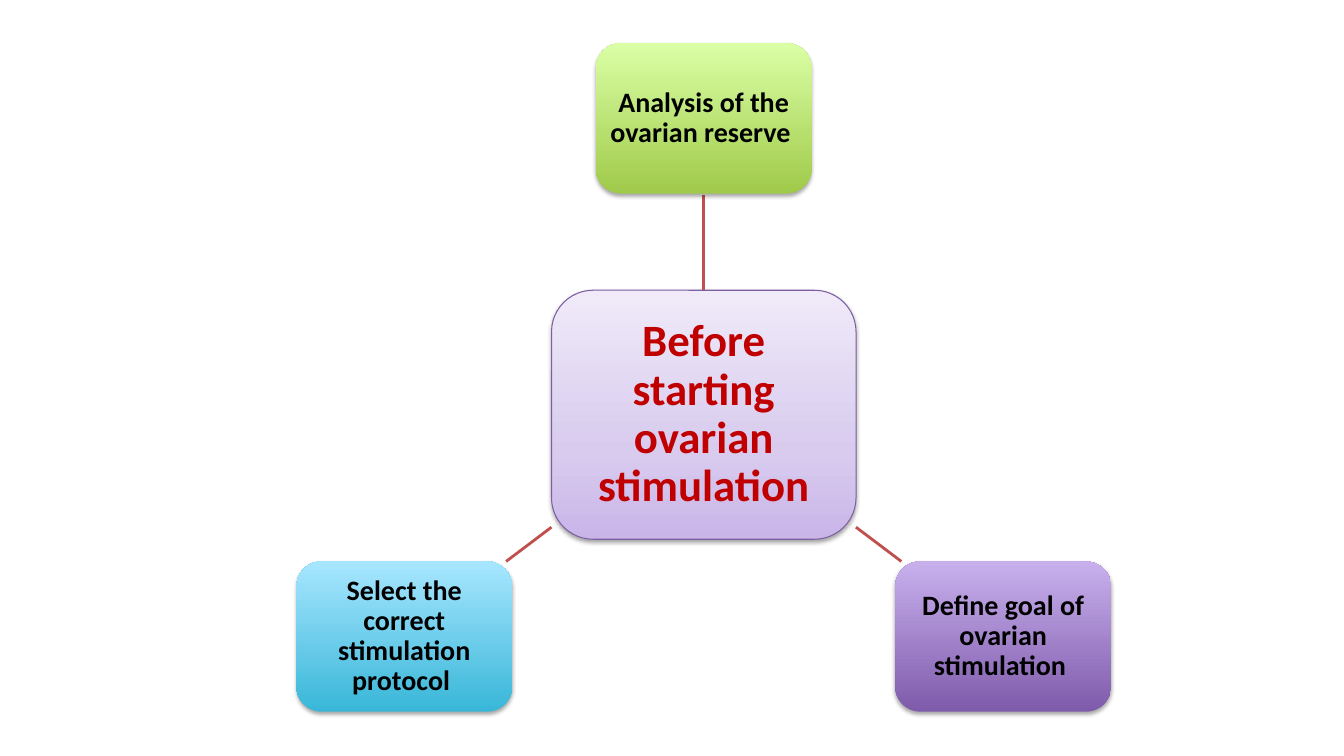
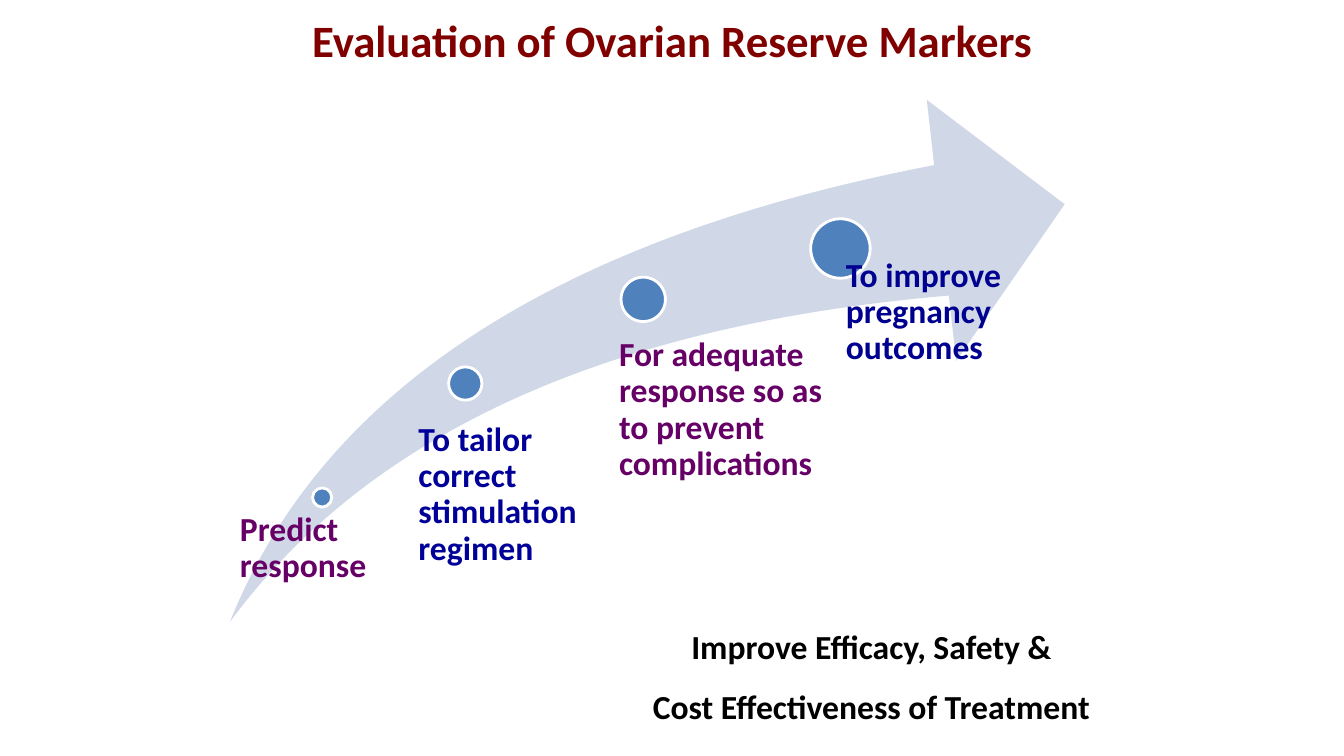
from lxml import etree
from pptx import Presentation
from pptx.dml.color import RGBColor
from pptx.enum.shapes import MSO_CONNECTOR, MSO_SHAPE
from pptx.enum.text import MSO_ANCHOR, PP_ALIGN
from pptx.oxml import parse_xml
from pptx.oxml.ns import nsdecls, qn
from pptx.util import Inches, Pt

ROUNDED, CIRCLE, SWOOSH = MSO_SHAPE.ROUNDED_RECTANGLE, MSO_SHAPE.OVAL, MSO_SHAPE.SWOOSH_ARROW
STRAIGHT = MSO_CONNECTOR.STRAIGHT
TOP, MIDDLE = MSO_ANCHOR.TOP, MSO_ANCHOR.MIDDLE
LEFT, CENTER = PP_ALIGN.LEFT, PP_ALIGN.CENTER

FONT = "Calibri"
BLACK = RGBColor(0x00, 0x00, 0x00)
WHITE = RGBColor(0xFF, 0xFF, 0xFF)
RED = RGBColor(0xC0, 0x00, 0x00)
MAROON = RGBColor(0x80, 0x00, 0x00)
PLUM = RGBColor(0x66, 0x00, 0x66)
NAVY = RGBColor(0x00, 0x00, 0x99)
DEEP_NAVY = RGBColor(0x00, 0x00, 0x90)
BLUE = RGBColor(0x4F, 0x81, 0xBD)
PALE_BLUE = RGBColor(0xD0, 0xD8, 0xE8)
BRICK = RGBColor(0xC0, 0x50, 0x4D)
VIOLET = RGBColor(0x7D, 0x60, 0xA0)

# Gradient stops from bottom to top: (percent, colour)
LILAC_FADE = [(0, RGBColor(0xC9, 0xB5, 0xE8)), (35, RGBColor(0xD8, 0xCB, 0xEE)),
              (100, RGBColor(0xF0, 0xEA, 0xF9))]
GREEN_FADE = [(0, RGBColor(0xA0, 0xCA, 0x4A)), (100, RGBColor(0xDA, 0xFF, 0xA5))]
PURPLE_FADE = [(0, RGBColor(0x7F, 0x5B, 0xAB)), (100, RGBColor(0xC8, 0xB0, 0xED))]
CYAN_FADE = [(0, RGBColor(0x39, 0xB7, 0xD8)), (100, RGBColor(0xA7, 0xE6, 0xFF))]


class Deck:
    def __init__(self):
        self.prs = Presentation()
        self.prs.slide_width, self.prs.slide_height = Inches(13.33), Inches(7.5)
        self.slide = None

    def new_slide(self):
        self.slide = self.prs.slides.add_slide(self.prs.slide_layouts[6])

    def set_text(self, frame, lines, size, color, align, spacing, anchor, inset):
        frame.word_wrap = True
        frame.vertical_anchor = anchor
        frame.margin_left = frame.margin_right = Inches(inset[0])
        frame.margin_top = frame.margin_bottom = Inches(inset[1])
        for index, line in enumerate(lines):
            paragraph = frame.add_paragraph() if index else frame.paragraphs[0]
            paragraph.text = line
            paragraph.alignment, paragraph.line_spacing = align, spacing
            font = paragraph.font
            font.name, font.size, font.bold = FONT, Pt(size), True
            font.color.rgb = color

    def text(self, box, lines, size, color, align=LEFT, spacing=0.9, inset=(0, 0)):
        frame = self.slide.shapes.add_textbox(*map(Inches, box)).text_frame
        self.set_text(frame, lines, size, color, align, spacing, TOP, inset)

    def shape(self, kind, box, fill=None, line=None, line_width=2):
        shape = self.slide.shapes.add_shape(kind, *map(Inches, box))
        shape.shadow.inherit = False
        if fill is not None:
            shape.fill.solid()
            shape.fill.fore_color.rgb = fill
        if line is None:
            shape.line.fill.background()
        else:
            shape.line.color.rgb, shape.line.width = line, Pt(line_width)
        return shape

    def card(self, box, label, stops, size, color, inset, line=None):
        """Rounded box with a vertical gradient, a soft shadow and a label."""
        card = self.shape(ROUNDED, box, line=line, line_width=0.75)
        card.fill.gradient()
        card.fill.gradient_angle = 90
        properties = card._element.spPr
        stop_list = properties.find(qn("a:gradFill")).find(qn("a:gsLst"))
        for old_stop in list(stop_list):
            stop_list.remove(old_stop)
        for percent, stop_color in stops:
            stop = etree.SubElement(stop_list, qn("a:gs"), pos=str(percent * 1000))
            etree.SubElement(stop, qn("a:srgbClr"), val=str(stop_color))
        properties.find(qn("a:effectLst")).append(parse_xml(
            f'<a:outerShdw {nsdecls("a")} blurRad="{Pt(3.1)}" dist="{Pt(1.8)}" dir="5400000"'
            ' rotWithShape="0"><a:srgbClr val="000000"><a:alpha val="35000"/></a:srgbClr>'
            '</a:outerShdw>'))
        self.set_text(card.text_frame, [label], size, color, CENTER, 0.9, MIDDLE, (inset, inset))

    def spoke(self, start, end):
        spoke = self.slide.shapes.add_connector(STRAIGHT, *map(Inches, start + end))
        spoke.line.color.rgb, spoke.line.width = BRICK, Pt(2)
        etree.SubElement(spoke._element.spPr, qn("a:effectLst"))


def preparation_slide(deck):
    deck.new_slide()
    axis = 6.98

    # Hub
    hub_width = 3.02
    deck.card((axis - hub_width / 2, 2.88, hub_width, 2.47), "Before starting ovarian stimulation",
              LILAC_FADE, 32, RED, 0.09, line=VIOLET)

    # Steps around it: offset from the axis, top, label, gradient, spoke ends
    step_width, step_height = 2.14, 1.49
    steps = [
        (0, 0.43, "Analysis of the ovarian reserve ", GREEN_FADE, (0, 2.88), (0, 1.93)),
        (2.97, 5.57, "Define goal of ovarian stimulation ", PURPLE_FADE,
         (1.51, 5.23), (1.96, 5.57)),
        (-2.97, 5.57, "Select the correct stimulation protocol ", CYAN_FADE,
         (-1.51, 5.23), (-1.96, 5.57)),
    ]
    for offset, top, label, stops, start, end in steps:
        deck.spoke((axis + start[0], start[1]), (axis + end[0], end[1]))
        deck.card((axis + offset - step_width / 2, top, step_width, step_height),
                  label, stops, 20, BLACK, 0.06)


def markers_slide(deck):
    deck.new_slide()

    # Rising arrow
    arrow = deck.shape(SWOOSH, (2.28, 0.99, 8.28, 5.18), PALE_BLUE)
    arrow.adjustments[0] = arrow.adjustments[1] = 0.25

    # Milestones: dot left, top and size, then label box, wording and colour
    milestones = [
        (3.1, 4.84, 0.19, (2.38, 5.08, 1.6, 1.23), "Predict response", PLUM),
        (4.45, 3.64, 0.33, (4.15, 4.19, 2.11, 2.37), "To tailor correct stimulation regimen", NAVY),
        (6.16, 2.75, 0.44, (6.14, 3.35, 2.17, 3.2),
         "For adequate response so as to prevent complications", PLUM),
        (8.04, 2.17, 0.59, (8.39, 2.56, 2.18, 3.71), "To improve pregnancy outcomes", DEEP_NAVY),
    ]
    for left, top, size, label_box, label, color in milestones:
        deck.shape(CIRCLE, (left, top, size, size), BLUE, WHITE)
        deck.text(label_box, [label], 24, color)

    # Title and conclusion
    deck.text((1.67, 0.08, 10, 0.64), ["Evaluation of Ovarian Reserve Markers"], 32, MAROON,
              CENTER, 1.0, (0.1, 0.05))
    deck.text((6.18, 5.96, 5, 1.25),
              ["Improve Efficacy, Safety & ", "Cost Effectiveness of Treatment "], 24, BLACK,
              CENTER, 1.5, (0.1, 0.05))


def main():
    deck = Deck()
    preparation_slide(deck)
    markers_slide(deck)
    deck.prs.save("out.pptx")


if __name__ == "__main__":
    main()
